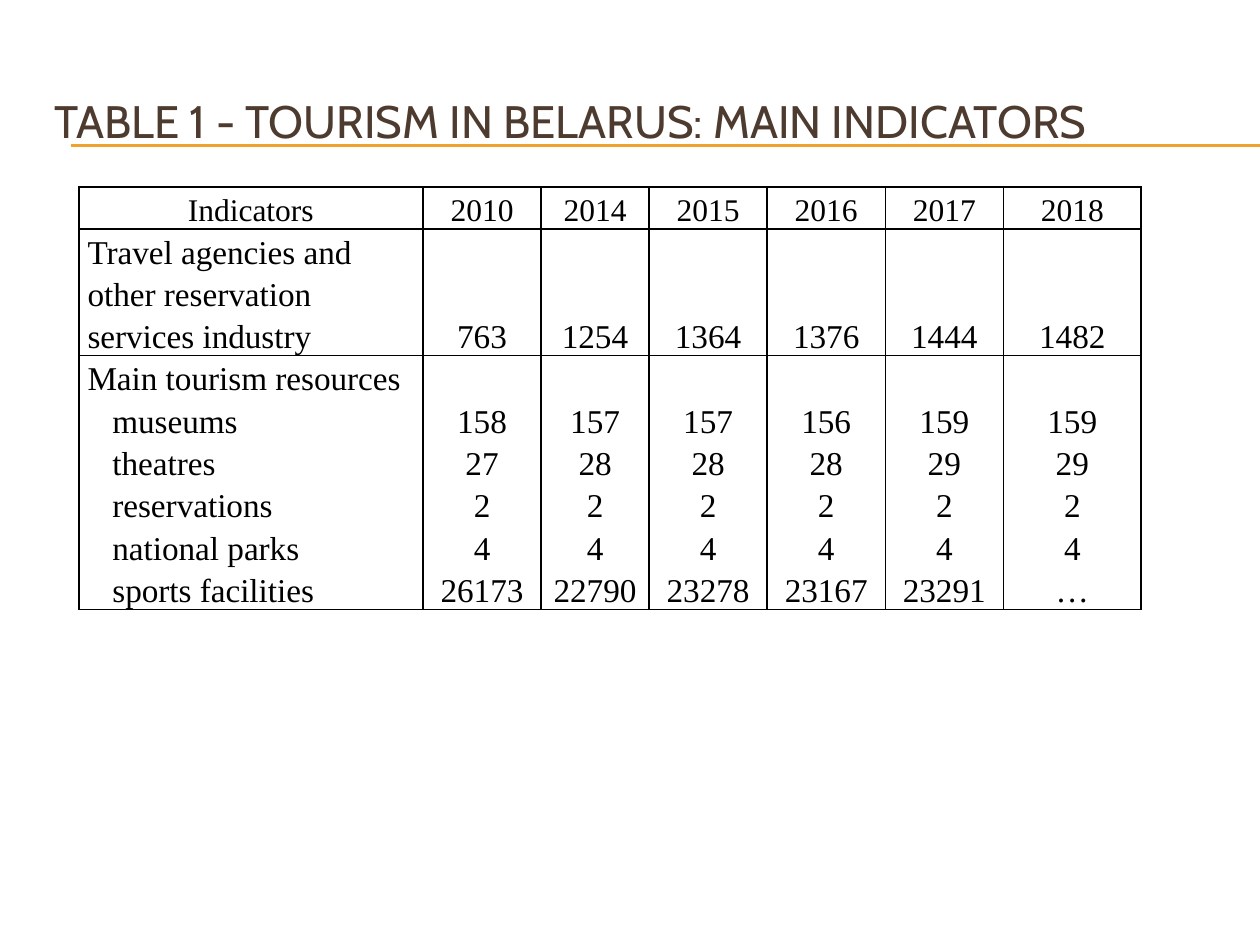
from pptx import Presentation
from pptx.dml.color import RGBColor
from pptx.enum.shapes import MSO_CONNECTOR
from pptx.enum.text import MSO_ANCHOR, PP_ALIGN
from pptx.oxml.ns import qn
from pptx.util import Pt
from lxml.etree import SubElement

THEME = {
    "title": {"name": "Cabin", "size": Pt(26), "color": "4E3B30"},
    "header": {"name": "Times New Roman", "size": Pt(18), "color": "000000"},
    "body": {"name": "Times New Roman", "size": Pt(19), "color": "000000"},
    "rule": "F0A22E",
    "border": "000000",
}


def style_font(font, style):
    font.name = style["name"]
    font.size = style["size"]
    font.bold = False
    font.color.rgb = RGBColor.from_string(style["color"])


def set_border(cell, side, visible):
    line = SubElement(cell._tc.get_or_add_tcPr(), qn(f"a:ln{side}"), w=str(Pt(1)))
    if visible:
        fill = SubElement(line, qn("a:solidFill"))
        SubElement(fill, qn("a:srgbClr"), val=THEME["border"])
    else:
        SubElement(line, qn("a:noFill"))


deck = Presentation()
deck.slide_width, deck.slide_height = Pt(720), Pt(540)
slide = deck.slides.add_slide(deck.slide_layouts[5])

# Double rule under the title
for y in (82.8, 83.5):
    rule = slide.shapes.add_connector(MSO_CONNECTOR.STRAIGHT, Pt(40.5), Pt(y), Pt(720), Pt(y))
    rule.line.color.rgb = RGBColor.from_string(THEME["rule"])
    rule.line.width = Pt(0.75)
    SubElement(rule._element.spPr, qn("a:effectLst"))

# Title, in front of the rules
heading = slide.shapes.title
slide.shapes._spTree.append(heading._element)
place = {"left": Pt(24), "top": Pt(36), "width": Pt(684), "height": Pt(66)}
for name, value in place.items():
    setattr(heading, name, value)
heading.text_frame.text = "TABLE 1 - TOURISM IN BELARUS: MAIN INDICATORS"
heading.text_frame.vertical_anchor = MSO_ANCHOR.MIDDLE
heading_line = heading.text_frame.paragraphs[0]
heading_line.alignment = PP_ALIGN.LEFT
style_font(heading_line.runs[0].font, THEME["title"])

# Tourism indicators by year
indicators = [
    ("Indicators", "2010", "2014", "2015", "2016", "2017", "2018"),
    ("Travel agencies and other reservation services industry",
     "763", "1254", "1364", "1376", "1444", "1482"),
    ("Main tourism resources", "", "", "", "", "", ""),
    ("museums", "158", "157", "157", "156", "159", "159"),
    ("theatres", "27", "28", "28", "28", "29", "29"),
    ("reservations", "2", "2", "2", "2", "2", "2"),
    ("national parks", "4", "4", "4", "4", "4", "4"),
    ("sports facilities", "26173", "22790", "23278", "23167", "23291", "…"),
]
column_widths = [196.7, 67.5, 61.7, 67.5, 67.5, 67.5, 78.8]
last_row = len(indicators) - 1
resources_row = 2

table_frame = slide.shapes.add_table(
    len(indicators), len(column_widths), Pt(45), Pt(106.8), Pt(607.2), Pt(260.6))
table = table_frame.table
table.first_row = table.horz_banding = False
for column, width in zip(table.columns, column_widths):
    column.width = Pt(width)

for r, values in enumerate(indicators):
    # Rows below the header grow to fit their text
    table.rows[r].height = Pt(17.25 if r else 24)
    style = THEME["body" if r else "header"]
    side_inset = Pt(5 if r else 3.75)
    cell_format = {
        "margin_left": side_inset, "margin_right": side_inset,
        "margin_top": 0, "margin_bottom": 0,
        "vertical_anchor": MSO_ANCHOR.BOTTOM if r else MSO_ANCHOR.MIDDLE,
    }
    # The resource rows share one outline
    borders = {"L": True, "R": True, "T": r <= resources_row,
               "B": r < resources_row or r == last_row}
    for c, value in enumerate(values):
        cell = table.cell(r, c)
        for name, setting in cell_format.items():
            setattr(cell, name, setting)
        for side, visible in borders.items():
            set_border(cell, side, visible)
        cell.fill.background()
        if not value:
            continue
        cell.text = value
        entry = cell.text_frame.paragraphs[0]
        entry.line_spacing = 1.15
        entry.alignment = PP_ALIGN.CENTER if c or not r else PP_ALIGN.LEFT
        style_font(entry.runs[0].font, style)
        if c == 0 and r > resources_row:
            entry._p.get_or_add_pPr().set("marL", str(Pt(14.2)))
table_frame.height = Pt(260.6)

deck.save("out.pptx")
